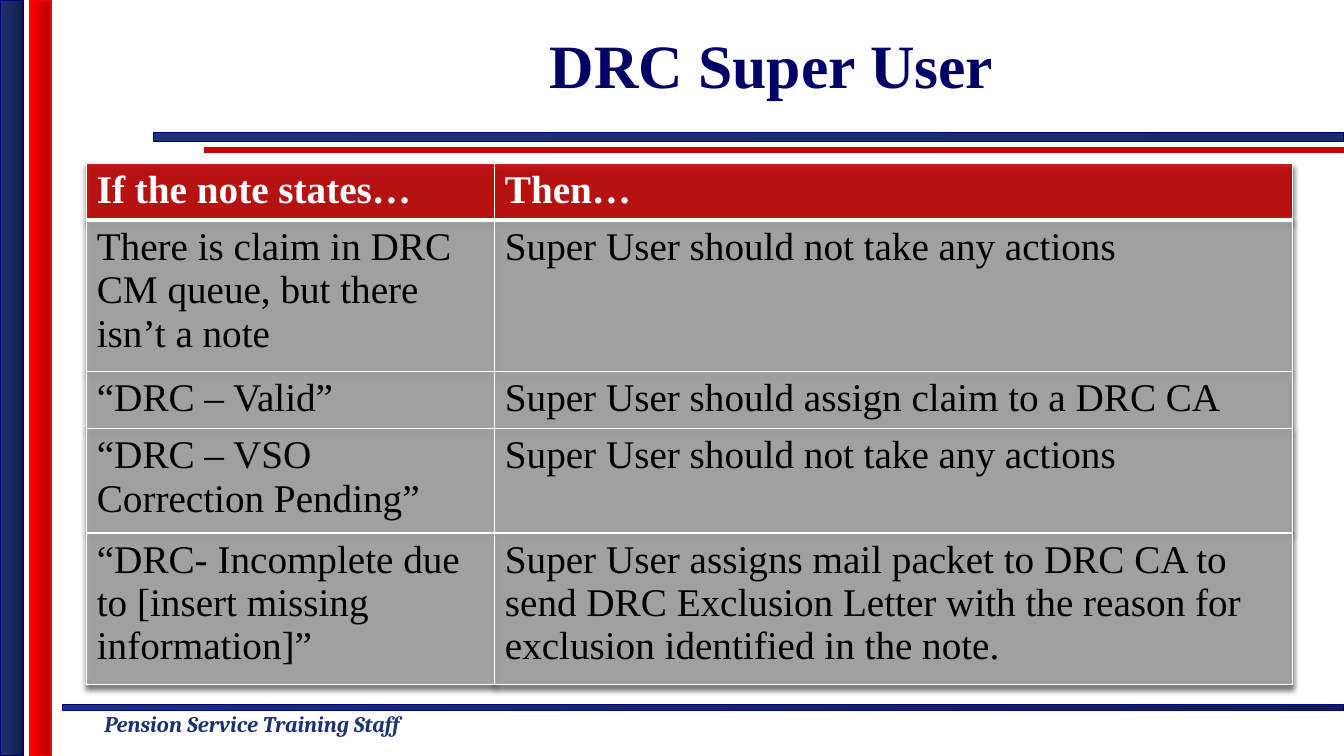
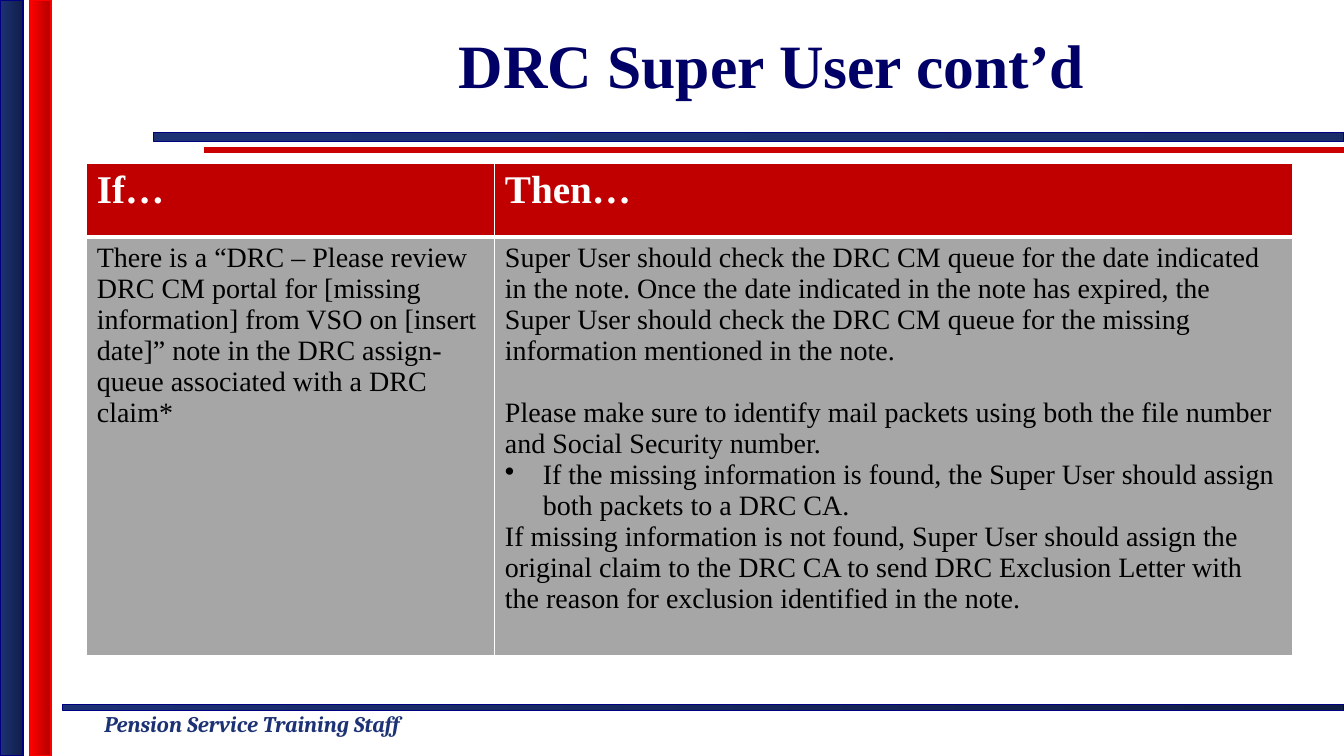
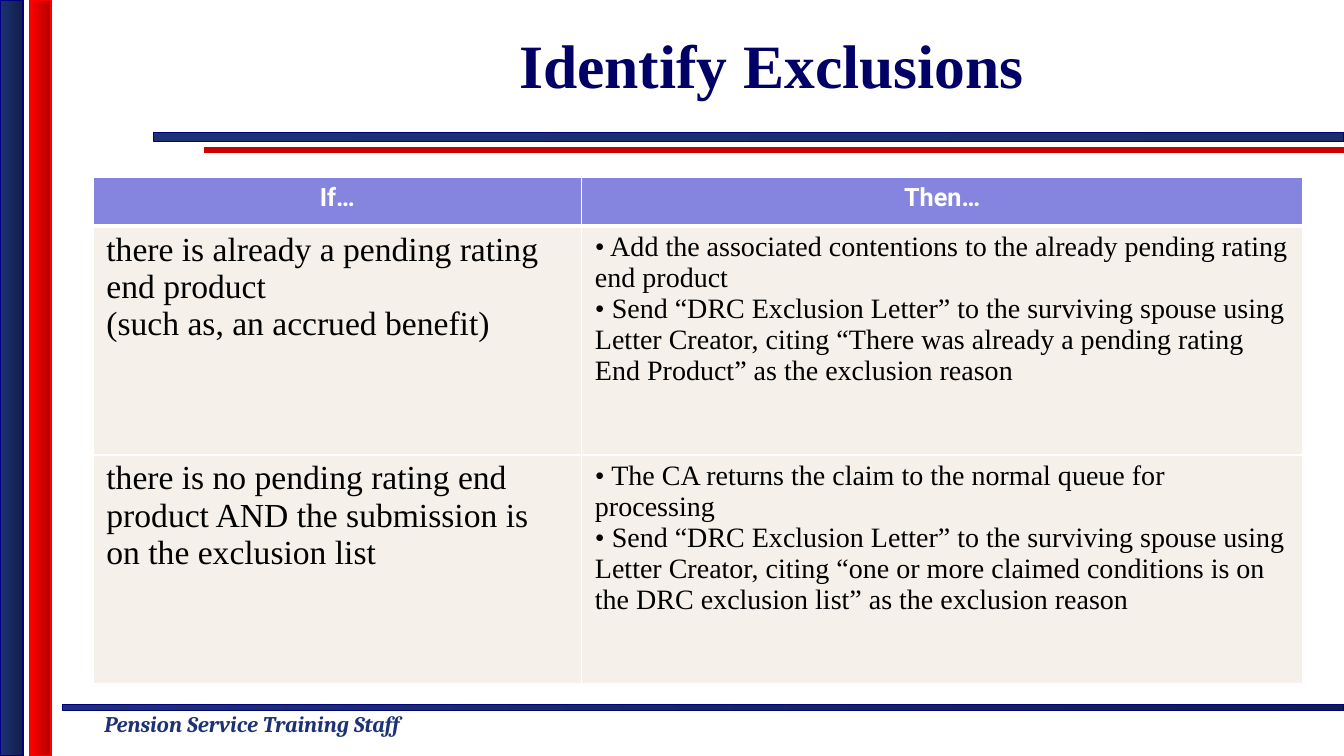
from dataclasses import dataclass

from lxml import etree
from pptx import Presentation
from pptx.dml.color import RGBColor
from pptx.enum.shapes import MSO_CONNECTOR, MSO_SHAPE
from pptx.enum.text import MSO_ANCHOR, PP_ALIGN
from pptx.oxml.ns import qn
from pptx.util import Pt

RECTANGLE = MSO_SHAPE.RECTANGLE
STRAIGHT = MSO_CONNECTOR.STRAIGHT
MIDDLE = MSO_ANCHOR.MIDDLE
TOP = MSO_ANCHOR.TOP
LEFT = PP_ALIGN.LEFT
CENTER = PP_ALIGN.CENTER

WHITE = RGBColor(0xFF, 0xFF, 0xFF)
BLACK = RGBColor(0x00, 0x00, 0x00)
NAVY = RGBColor(0x1D, 0x32, 0x75)
NAVY_DARK = RGBColor(0x11, 0x1E, 0x46)
NAVY_MID = RGBColor(0x1A, 0x2D, 0x69)
NAVY_EDGE = RGBColor(0x00, 0x00, 0x80)
TITLE_BLUE = RGBColor(0x00, 0x00, 0x66)
RED = RGBColor(0xFF, 0x00, 0x00)
RED_DARK = RGBColor(0xB2, 0x00, 0x00)
RULE_RED = RGBColor(0xCC, 0x00, 0x00)
HEADER_RED = RGBColor(0xC0, 0x00, 0x00)
BODY_GRAY = RGBColor(0xA6, 0xA6, 0xA6)
HEADER_LILAC = RGBColor(0x85, 0x85, 0xE0)
BODY_CREAM = RGBColor(0xF5, 0xF0, 0xE9)

SERIF = "Times New Roman"
SANS = "Roboto"
FOOTER_FONT = "Cambria"

SLIDE_WIDTH, SLIDE_HEIGHT = 960, 540
BANDS = [
    ((44.5, 503, 915.5, 4.5), NAVY, NAVY_DARK, NAVY_EDGE),
    ((109.5, 94.5, 850.5, 6.5), NAVY, NAVY_MID, NAVY_EDGE),
    ((0, 0, 16.5, SLIDE_HEIGHT), NAVY, NAVY_DARK, NAVY_EDGE),
    ((21.5, 0, 15, SLIDE_HEIGHT), RED, RED_DARK, RED),
]
TITLE_BOX = (168.5, 0, 765.5, 90.5)
FOOTER_BOX = (67.5, 504, 271.5, 26.5)
RULE_LEFT, RULE_TOP = 146, 107.3


@dataclass
class Para:
    text: str
    gap: float = 0
    bullet: bool = False


@dataclass
class TableStyle:
    header_fill: RGBColor
    body_fill: RGBColor
    header_font: str = SERIF
    header_size: float = 28
    header_align: PP_ALIGN = LEFT
    body_sizes: tuple = (28, 28)
    side_margin: float = 7.2
    opacity: int = 100
    shadow: bool = False


RED_STYLE = TableStyle(HEADER_RED, BODY_GRAY, opacity=86, shadow=True)
PLAIN_RED_STYLE = TableStyle(HEADER_RED, BODY_GRAY, body_sizes=(20, 20))
LILAC_STYLE = TableStyle(HEADER_LILAC, BODY_CREAM, SANS, 18, CENTER, (24, 20), 9.5)


def in_points(values):
    return [Pt(value) for value in values]


def set_font(paragraph, name, size, color, bold=False, italic=False):
    font = paragraph.font
    font.name, font.size, font.bold, font.italic = name, Pt(size), bold, italic
    font.color.rgb = color


def add_band(slide, box, start, end, edge):
    band = slide.shapes.add_shape(RECTANGLE, *in_points(box))
    band.shadow.inherit = False
    band.fill.gradient()
    band.fill.gradient_angle = 0
    for stop, color in zip(band.fill.gradient_stops, (start, end)):
        stop.color.rgb = color
    band.line.color.rgb = edge
    band.line.width = Pt(1)


def add_label(slide, box, text, wrap, anchor, align):
    frame = slide.shapes.add_textbox(*in_points(box)).text_frame
    frame.word_wrap = wrap
    frame.vertical_anchor = anchor
    paragraph = frame.paragraphs[0]
    paragraph.text = text
    paragraph.alignment = align
    return paragraph


def add_frame(slide, title):
    rule = slide.shapes.add_connector(
        STRAIGHT, *in_points((RULE_LEFT, RULE_TOP, SLIDE_WIDTH, RULE_TOP)))
    rule.line.color.rgb = RULE_RED
    rule.line.width = Pt(4)
    etree.SubElement(rule._element.spPr, qn("a:effectLst"))
    for band in BANDS:
        add_band(slide, *band)
    footer = add_label(slide, FOOTER_BOX, "Pension Service Training Staff", False, TOP, LEFT)
    set_font(footer, FOOTER_FONT, 16, NAVY, bold=True, italic=True)
    heading = add_label(slide, TITLE_BOX, title, True, MIDDLE, CENTER)
    set_font(heading, SERIF, 44, TITLE_BLUE, bold=True)


def set_borders(cell, widths):
    properties = cell._tc.get_or_add_tcPr()
    for index, (side, width) in enumerate(widths.items()):
        border = etree.Element(qn(f"a:ln{side}"), w=str(Pt(width)))
        fill = etree.SubElement(border, qn("a:solidFill"))
        etree.SubElement(fill, qn("a:srgbClr"), val=str(WHITE))
        properties.insert(index, border)


def fill_cell(cell, color, opacity):
    cell.fill.solid()
    cell.fill.fore_color.rgb = color
    if opacity < 100:
        color_node = cell._tc.tcPr.find(".//" + qn("a:srgbClr"))
        etree.SubElement(color_node, qn("a:alpha"), val=str(opacity * 1000))


def add_bullet(paragraph):
    properties = paragraph._p.get_or_add_pPr()
    properties.set("marL", str(Pt(27)))
    properties.set("indent", str(-Pt(27)))
    etree.SubElement(properties, qn("a:buChar"), char="•")


def write_cell(cell, paras, is_header, column, style):
    frame = cell.text_frame
    for index, para in enumerate(paras):
        paragraph = frame.add_paragraph() if index else frame.paragraphs[0]
        paragraph.text = para.text
        if para.gap:
            paragraph.space_before = Pt(para.gap)
        if para.bullet:
            add_bullet(paragraph)
        if is_header:
            paragraph.alignment = style.header_align
            set_font(paragraph, style.header_font, style.header_size, WHITE, bold=True)
        else:
            set_font(paragraph, SERIF, style.body_sizes[column], BLACK)


def add_table_shadow(table):
    effects = etree.SubElement(table._tbl.tblPr, qn("a:effectLst"))
    table._tbl.tblPr.insert(0, effects)
    shadow = etree.SubElement(effects, qn("a:outerShdw"), blurRad=str(Pt(4)),
                              dist=str(Pt(3)), dir="5400000", algn="t", rotWithShape="0")
    color = etree.SubElement(shadow, qn("a:srgbClr"), val=str(BLACK))
    etree.SubElement(color, qn("a:alpha"), val="57000")


def add_decision_table(slide, left, top, widths, heights, rows, style):
    table = slide.shapes.add_table(
        len(rows), len(widths),
        *in_points((left, top, sum(widths), sum(heights)))).table
    table.horz_banding = False
    if style.shadow:
        add_table_shadow(table)
    for column, width in zip(table.columns, widths):
        column.width = Pt(width)
    for row_index, (height, row) in enumerate(zip(heights, rows)):
        table.rows[row_index].height = Pt(height)
        is_header = row_index == 0
        borders = {"L": 1, "R": 1, "T": 3 if row_index == 1 else 1, "B": 3 if is_header else 1}
        for column_index, content in enumerate(row):
            cell = table.cell(row_index, column_index)
            cell.margin_left = cell.margin_right = Pt(style.side_margin)
            paras = [Para(content)] if isinstance(content, str) else content
            write_cell(cell, paras, is_header, column_index, style)
            fill_cell(cell, style.header_fill if is_header else style.body_fill, style.opacity)
            set_borders(cell, borders)


NOTE_ROWS = [
    ("If the note states…", "Then…"),
    ("There is claim in DRC CM queue, but there isn’t a note",
     "Super User should not take any actions"),
    ("“DRC – Valid”", "Super User should assign claim to a DRC CA"),
    ("“DRC – VSO Correction Pending”", "Super User should not take any actions"),
    ("“DRC- Incomplete due to [insert missing information]”",
     "Super User assigns mail packet to DRC CA to send DRC Exclusion Letter with the "
     "reason for exclusion identified in the note."),
]
REVIEW_ROWS = [
    ("If…", "Then…"),
    ("There is a “DRC – Please review DRC CM portal for [missing information] from VSO on "
     "[insert date]” note in the DRC assign-queue associated with a DRC claim*",
     [Para("Super User should check the DRC CM queue for the date indicated in the note. "
           "Once the date indicated in the note has expired, the Super User should check "
           "the DRC CM queue for the missing information mentioned in the note."),
      Para("Please make sure to identify mail packets using both the file number and "
           "Social Security number.", gap=22),
      Para("If the missing information is found, the Super User should assign both packets "
           "to a DRC CA.", bullet=True),
      Para("If missing information is not found, Super User should assign the original claim "
           "to the DRC CA to send DRC Exclusion Letter with the reason for exclusion "
           "identified in the note.")]),
]
EXCLUSION_ROWS = [
    ("If…", "Then…"),
    ([Para("there is already a pending rating end product"),
      Para("(such as, an accrued benefit)")],
     [Para("• Add the associated contentions to the already pending rating end product"),
      Para("• Send “DRC Exclusion Letter” to the surviving spouse using Letter Creator, citing "
           "“There was already a pending rating End Product” as the exclusion reason")]),
    ("there is no pending rating end product AND the submission is on the exclusion list",
     [Para("• The CA returns the claim to the normal queue for processing"),
      Para("• Send “DRC Exclusion Letter” to the surviving spouse using Letter Creator, citing "
           "“one or more claimed conditions is on the DRC exclusion list” as the exclusion "
           "reason")]),
]
SLIDES = [
    ("DRC Super User", 62, 116.5, (291.5, 570), (38, 100, 38, 69, 100), NOTE_ROWS, RED_STYLE),
    ("DRC Super User cont’d", 62, 116.5, (291.5, 570), (53, 299), REVIEW_ROWS, PLAIN_RED_STYLE),
    ("Identify Exclusions", 66.5, 127, (349, 515), (34.5, 163.5, 163.5), EXCLUSION_ROWS,
     LILAC_STYLE),
]


def main():
    deck = Presentation()
    deck.slide_width, deck.slide_height = Pt(SLIDE_WIDTH), Pt(SLIDE_HEIGHT)
    for title, *table_parts in SLIDES:
        slide = deck.slides.add_slide(deck.slide_layouts[6])
        add_frame(slide, title)
        add_decision_table(slide, *table_parts)
    deck.save("out.pptx")


if __name__ == "__main__":
    main()
